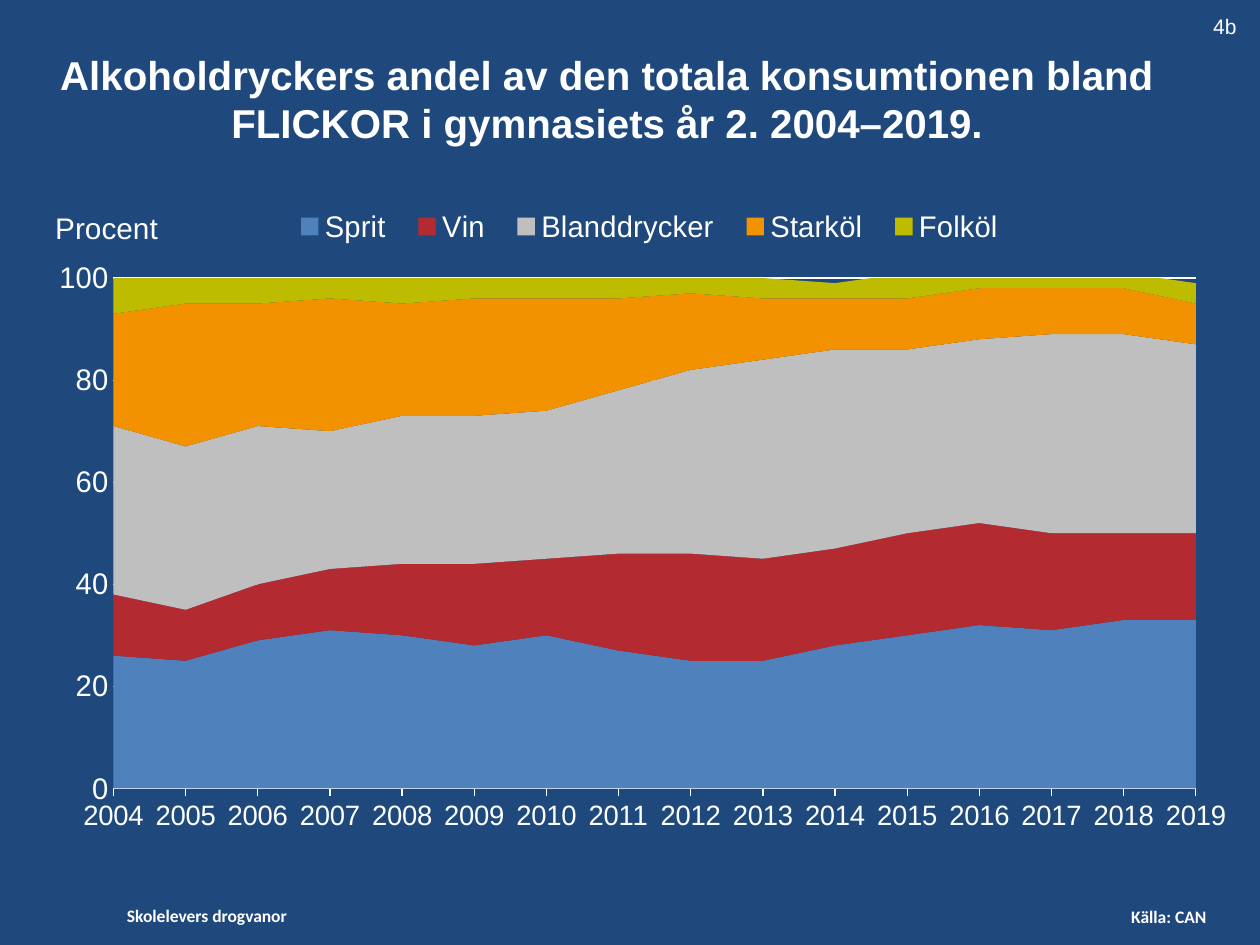
"""Build a slide with a stacked area chart of drink shares among girls, 2004–2019."""
from lxml import etree
from pptx import Presentation
from pptx.chart.data import CategoryChartData
from pptx.dml.color import RGBColor
from pptx.enum.chart import XL_CHART_TYPE, XL_LEGEND_POSITION, XL_TICK_MARK
from pptx.enum.text import MSO_ANCHOR, PP_ALIGN
from pptx.oxml.ns import qn
from pptx.util import Inches, Pt

AREA_STACKED = XL_CHART_TYPE.AREA_STACKED
LEGEND_BOTTOM = XL_LEGEND_POSITION.BOTTOM
TICK_NONE, TICK_OUTSIDE = XL_TICK_MARK.NONE, XL_TICK_MARK.OUTSIDE
MIDDLE, TOP = MSO_ANCHOR.MIDDLE, MSO_ANCHOR.TOP
CENTER, LEFT = PP_ALIGN.CENTER, PP_ALIGN.LEFT

COLORS = {
    "background": "1F497D",
    "text": "FFFFFF",
    "Sprit": "4F81BD",
    "Vin": "B32B31",
    "Blanddrycker": "BFBFBF",
    "Starköl": "F29200",
    "Folköl": "BEBC00",
}
TITLE = ("Alkoholdryckers andel av den totala konsumtionen bland "
         "FLICKOR i gymnasiets år 2. 2004–2019.")
TITLE_BOX = (0.23, 0.31, 9.19, 0.94)
YEARS = [str(year) for year in range(2004, 2020)]
SHARES = {
    "Sprit": [26, 25, 29, 31, 30, 28, 30, 27, 25, 25, 28, 30, 32, 31, 33, 33],
    "Vin": [12, 10, 11, 12, 14, 16, 15, 19, 21, 20, 19, 20, 20, 19, 17, 17],
    "Blanddrycker": [33, 32, 31, 27, 29, 29, 29, 32, 36, 39, 39, 36, 36, 39, 39, 37],
    "Starköl": [22, 28, 24, 26, 22, 23, 22, 18, 15, 12, 10, 10, 10, 9, 9, 8],
    "Folköl": [7, 6, 6, 5, 5, 4, 4, 5, 4, 4, 3, 5, 3, 3, 3, 4],
}
CHART_BOX = (0.47, 1.48, 9.26, 5.31)
PLOT_LAYOUT = (0.036, 0.137, 0.947, 0.763)
LEGEND_LAYOUT = (0.18, 0.02, 0.65, 0.08)
LABELS = [
    ("Skolelevers drogvanor", (0.91, 7.13, 1.67, 0.27),
     {"size": 10, "name": "Calibri", "bold": True, "wrap": False}),
    ("Källa: CAN", (8.88, 7.14, 0.94, 0.27),
     {"size": 10, "name": "Calibri", "bold": True, "wrap": False}),
    ("Procent", (0.34, 1.61, 1.04, 0.39), {"size": 17, "anchor": MIDDLE}),
    ("4b", (9.53, 0.06, 0.43, 0.3), {"size": 12}),
]


def color(key):
    return RGBColor.from_string(COLORS[key])


def format_font(font, size, name="Arial", bold=False):
    font.size, font.name, font.bold = Pt(size), name, bold
    font.color.rgb = color("text")


def write_text(shape, text, size, name="Arial", bold=False, wrap=True,
               anchor=TOP, align=LEFT):
    frame = shape.text_frame
    frame.word_wrap, frame.vertical_anchor = wrap, anchor
    paragraph = frame.paragraphs[0]
    paragraph.alignment = align
    run = paragraph.add_run()
    run.text = text
    format_font(run.font, size, name, bold)


def make_layout(box, inner=False):
    layout = etree.Element(qn("c:layout"))
    manual = etree.SubElement(layout, qn("c:manualLayout"))
    settings = [("layoutTarget", "inner")] if inner else []
    settings += [("xMode", "edge"), ("yMode", "edge")]
    settings += zip("xywh", box)
    for tag, value in settings:
        etree.SubElement(manual, qn(f"c:{tag}")).set("val", str(value))
    return layout


def remove_layout(element):
    for layout in element.findall(qn("c:layout")):
        element.remove(layout)


def add_share_chart(slide):
    data = CategoryChartData(number_format="0")
    data.categories = YEARS
    for name, values in SHARES.items():
        data.add_series(name, values)
    frame = slide.shapes.add_chart(AREA_STACKED, *map(Inches, CHART_BOX), data)
    chart = frame.chart
    chart.has_title = False
    format_font(chart.font, 10, "Calibri")
    plot = chart.plots[0]
    plot.vary_by_categories = False
    for series in plot.series:
        series.format.fill.solid()
        series.format.fill.fore_color.rgb = color(series.name)
        series.format.line.fill.background()

    years = chart.category_axis
    years.major_tick_mark, years.minor_tick_mark = TICK_OUTSIDE, TICK_NONE
    format_font(years.tick_labels.font, 16)

    percent = chart.value_axis
    percent.minimum_scale, percent.maximum_scale = 0, 100
    percent.major_unit = 20
    percent.major_tick_mark = percent.minor_tick_mark = TICK_NONE
    percent.has_major_gridlines = True
    percent.tick_labels.number_format = "0"
    percent.tick_labels.number_format_is_linked = False
    format_font(percent.tick_labels.font, 17)
    percent.format.line.fill.background()
    for line in (years.format.line, percent.major_gridlines.format.line):
        line.color.rgb = color("text")
        line.width = Pt(0.75)

    chart.has_legend = True
    legend = chart.legend
    legend.position = LEGEND_BOTTOM
    legend.include_in_layout = False
    format_font(legend.font, 17)

    chart_space = chart.element
    plot_area = chart_space.find(f".//{qn('c:plotArea')}")
    remove_layout(plot_area)
    plot_area.insert(0, make_layout(PLOT_LAYOUT, inner=True))
    legend_position = chart_space.find(f".//{qn('c:legendPos')}")
    remove_layout(legend_position.getparent())
    legend_position.addnext(make_layout(LEGEND_LAYOUT))
    chart_space.find(f".//{qn('c:crossBetween')}").set("val", "midCat")


def main():
    presentation = Presentation()
    presentation.slide_width, presentation.slide_height = Inches(10), Inches(7.5)
    slide = presentation.slides.add_slide(presentation.slide_layouts[5])
    slide.background.fill.solid()
    slide.background.fill.fore_color.rgb = color("background")

    title = slide.shapes.title
    title.left, title.top, title.width, title.height = map(Inches, TITLE_BOX)
    write_text(title, TITLE, size=23, bold=True, anchor=MIDDLE, align=CENTER)

    add_share_chart(slide)
    for text, box, style in LABELS:
        write_text(slide.shapes.add_textbox(*map(Inches, box)), text, **style)
    presentation.save("out.pptx")


if __name__ == "__main__":
    main()
